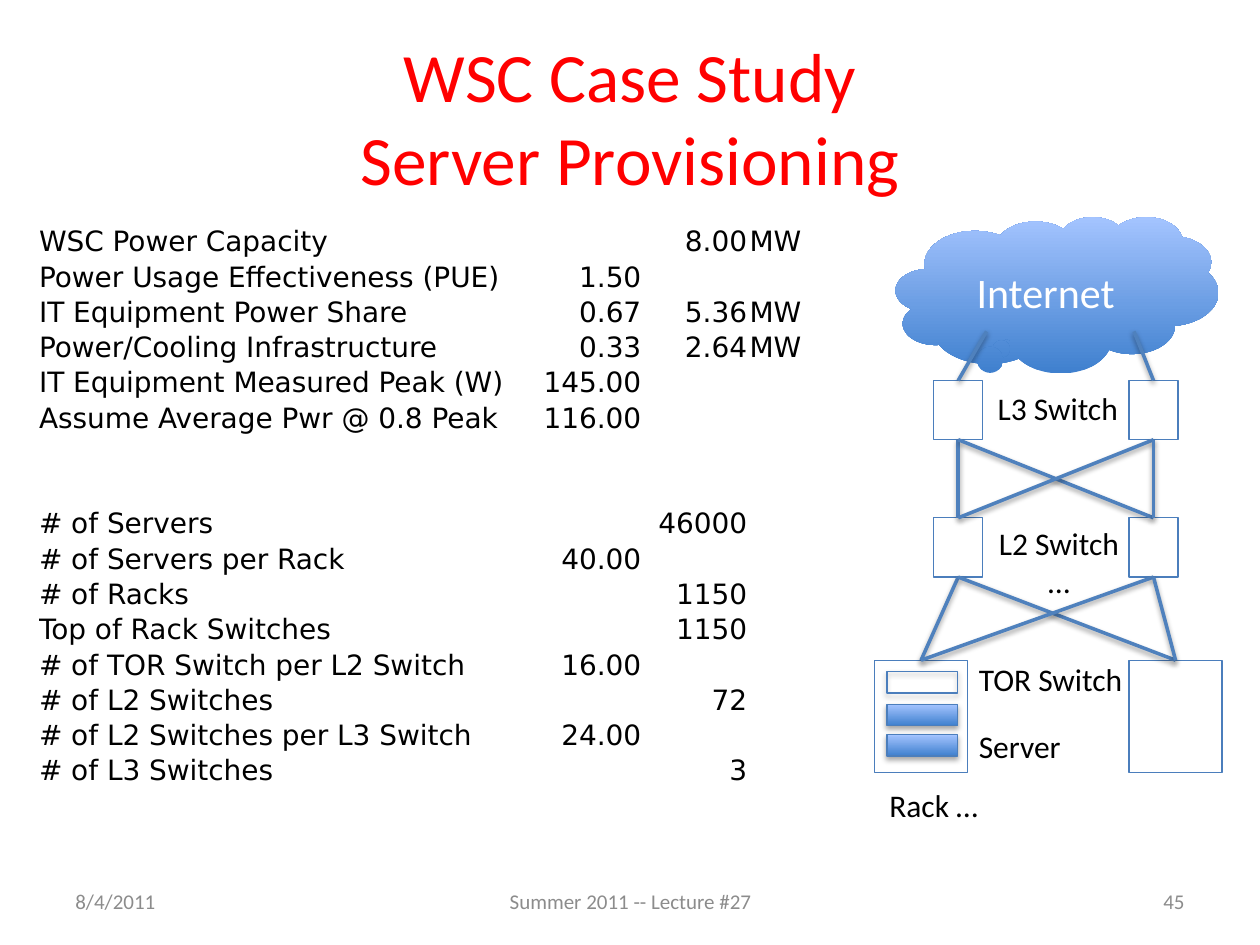
from dataclasses import dataclass

from lxml import etree
from pptx import Presentation
from pptx import util as u
from pptx.dml.color import RGBColor
from pptx.enum import shapes, text
from pptx.oxml.ns import qn


@dataclass(frozen=True)
class Theme:
    body_font: str = "Calibri"
    table_font: str = "DejaVu Sans"
    title_size: float = 39.6
    cloud_size: float = 24
    label_size: float = 18
    table_size: float = 16
    footer_size: float = 12
    black: str = "000000"
    white: str = "FFFFFF"
    red: str = "FF0000"
    grey: str = "8C8C8C"
    outline: str = "4B7EBC"
    link: str = "4F81BD"
    gradient: tuple = ("3F80CE", "A4C4FF")


THEME = Theme()
LEFT, CENTER, RIGHT = text.PP_ALIGN.LEFT, text.PP_ALIGN.CENTER, text.PP_ALIGN.RIGHT
TOP, BOTTOM = 0, 2  # connection sites of a rectangle

COLUMN_WIDTHS = (3.88, 0.92, 0.84, 0.54)
ROW_HEIGHT = 0.28
ROWS = (
    ("WSC Power Capacity", "", "8.00", "MW"),
    ("Power Usage Effectiveness (PUE)", "1.50", "", ""),
    ("IT Equipment Power Share", "0.67", "5.36", "MW"),
    ("Power/Cooling Infrastructure", "0.33", "2.64", "MW"),
    ("IT Equipment Measured Peak (W)", "145.00", "", ""),
    ("Assume Average Pwr @ 0.8 Peak", "116.00", "", ""),
    ("", "", "", ""),
    ("", "", "", ""),
    ("# of Servers", "", "46000", ""),
    ("# of Servers per Rack", "40.00", "", ""),
    ("# of Racks", "", "1150", ""),
    ("Top of Rack Switches", "", "1150", ""),
    ("# of TOR Switch per L2 Switch", "16.00", "", ""),
    ("# of L2 Switches", "", "72", ""),
    ("# of L2 Switches per L3 Switch", "24.00", "", ""),
    ("# of L3 Switches", "", "3", ""),
)


def inches(*lengths):
    return [u.Inches(length) for length in lengths]


def style_paragraph(para, size, color, align=LEFT, font=THEME.body_font):
    para.alignment = align
    for span in para.runs:
        span.font.size = u.Pt(size)
        span.font.name = font
        span.font.color.rgb = RGBColor.from_string(color)


def add_text(page, area, lines, size, color, align=LEFT, fit=False):
    box = page.shapes.add_textbox(*inches(*area))
    frame = box.text_frame
    frame.word_wrap = not fit
    if fit:
        frame.auto_size = text.MSO_AUTO_SIZE.SHAPE_TO_FIT_TEXT
    else:
        frame.vertical_anchor = text.MSO_ANCHOR.MIDDLE
    for index, line in enumerate(lines):
        para = frame.add_paragraph() if index else frame.paragraphs[0]
        para.text = line
        style_paragraph(para, size, color, align)


def add_shadow(item, blur, distance, opacity):
    properties = item._element.spPr
    for old in properties.findall(qn("a:effectLst")):
        properties.remove(old)
    effects = etree.SubElement(properties, qn("a:effectLst"))
    shadow = etree.SubElement(
        effects, qn("a:outerShdw"), blurRad=str(u.Pt(blur)),
        dist=str(u.Pt(distance)), dir="5400000", rotWithShape="0")
    color = etree.SubElement(shadow, qn("a:srgbClr"), val=THEME.black)
    etree.SubElement(color, qn("a:alpha"), val=str(opacity * 1000))


def fill_gradient(shape):
    shape.fill.gradient()
    shape.fill.gradient_angle = 90
    for stop, color in zip(shape.fill.gradient_stops, THEME.gradient):
        stop.color.rgb = RGBColor.from_string(color)


def add_box(page, area, filled=False, shadow=False):
    box = page.shapes.add_shape(shapes.MSO_SHAPE.RECTANGLE, *inches(*area))
    box.shadow.inherit = False
    if filled:
        fill_gradient(box)
    else:
        box.fill.background()
    box.line.color.rgb = RGBColor.from_string(THEME.outline)
    box.line.width = u.Pt(0.75)
    if shadow:
        add_shadow(box, 3.1, 1.8, 35)
    return box


def add_link(page, lower, upper=None, start=(0, 0)):
    """Link the top of a lower box to an upper box, or to a free start point."""
    link = page.shapes.add_connector(
        shapes.MSO_CONNECTOR.STRAIGHT, *inches(*start, *start))
    if upper is not None:
        link.begin_connect(upper, BOTTOM)
    link.end_connect(lower, TOP)
    link.line.color.rgb = RGBColor.from_string(THEME.link)
    link.line.width = u.Pt(2)
    add_shadow(link, 3.1, 1.6, 38)


def add_cloud(page):
    cloud = page.shapes.add_shape(
        shapes.MSO_SHAPE.CLOUD_CALLOUT, *inches(7.11, 1.72, 2.56, 1.24))
    cloud.adjustments[0], cloud.adjustments[1] = -0.157, 0.315
    cloud.shadow.inherit = False
    fill_gradient(cloud)
    cloud.line.fill.background()
    cloud.text_frame.text = "Internet"
    cloud.text_frame.vertical_anchor = text.MSO_ANCHOR.MIDDLE
    style_paragraph(cloud.text_frame.paragraphs[0], THEME.cloud_size, THEME.white, CENTER)


def add_provisioning_table(page):
    size = inches(sum(COLUMN_WIDTHS), ROW_HEIGHT * len(ROWS))
    table = page.shapes.add_table(
        len(ROWS), len(COLUMN_WIDTHS), *inches(0.3, 1.77), *size).table
    table.first_row = table.horz_banding = False
    for column, width in zip(table.columns, COLUMN_WIDTHS):
        column.width = u.Inches(width)
    for row, values in zip(table.rows, ROWS):
        row.height = u.Inches(ROW_HEIGHT)
        for index, (cell, value) in enumerate(zip(row.cells, values)):
            cell.fill.background()
            cell.margin_left = cell.margin_right = cell.margin_top = u.Inches(0.01)
            cell.margin_bottom = 0
            cell.vertical_anchor = text.MSO_ANCHOR.BOTTOM
            para = cell.text_frame.paragraphs[0]
            para.text = value
            style_paragraph(para, THEME.table_size, THEME.black,
                            RIGHT if index in (1, 2) else LEFT, THEME.table_font)
            if not value:  # keeps empty rows at their height
                para._p.get_or_add_endParaRPr().set("sz", str(THEME.table_size * 100))


def add_network(page):
    add_cloud(page)

    # Two switches on each level, two racks below
    columns = (7.41, 8.96)
    l3_switches = [add_box(page, (left, 3.02, 0.39, 0.47)) for left in columns]
    l2_switches = [add_box(page, (left, 4.11, 0.39, 0.47)) for left in columns]
    racks = [add_box(page, (left, 5.24, 0.74, 0.89)) for left in (6.94, 8.96)]

    # Rack contents: one switch above two servers
    for top, filled in ((5.33, False), (5.59, True), (5.83, True)):
        add_box(page, (7.04, top, 0.56, 0.17), filled, shadow=True)

    # Labels
    for area, lines, align in (
        ((7.82, 3.04, 1.17, 0.4), ["L3 Switch"], LEFT),
        ((7.82, 4.11, 1.17, 0.71), ["L2 Switch", "…"], CENTER),
        ((7.67, 5.19, 1.35, 0.4), ["TOR Switch"], LEFT),
        ((7.67, 5.72, 0.86, 0.4), ["Server"], LEFT),
        ((6.96, 6.19, 0.93, 0.4), ["Rack …"], LEFT),
    ):
        add_text(page, area, lines, THEME.label_size, THEME.black, align, fit=True)

    # Links: cloud to L3, then every box to every box one level down
    for switch, left in zip(l3_switches, (7.83, 9)):
        add_link(page, switch, start=(left, 2.63))
    for uppers, lowers in ((l3_switches, l2_switches), (l2_switches, racks)):
        for upper in uppers:
            for lower in lowers:
                add_link(page, lower, upper)


def main():
    deck = Presentation()
    deck.slide_width, deck.slide_height = inches(10, 7.5)
    page = deck.slides.add_slide(deck.slide_layouts[6])

    # Title
    add_text(page, (0.5, 0.3, 9, 1.25), ["WSC Case Study\nServer Provisioning"],
             THEME.title_size, THEME.red, CENTER)

    # Content
    add_provisioning_table(page)
    add_network(page)

    # Footer
    for left, width, line, align in (
        (0.5, 2.33, "8/4/2011", LEFT),
        (3.42, 3.17, "Summer 2011 -- Lecture #27", CENTER),
        (7.17, 2.33, "45", RIGHT),
    ):
        add_text(page, (left, 6.95, width, 0.4), [line],
                 THEME.footer_size, THEME.grey, align)

    deck.save("out.pptx")


if __name__ == "__main__":
    main()
